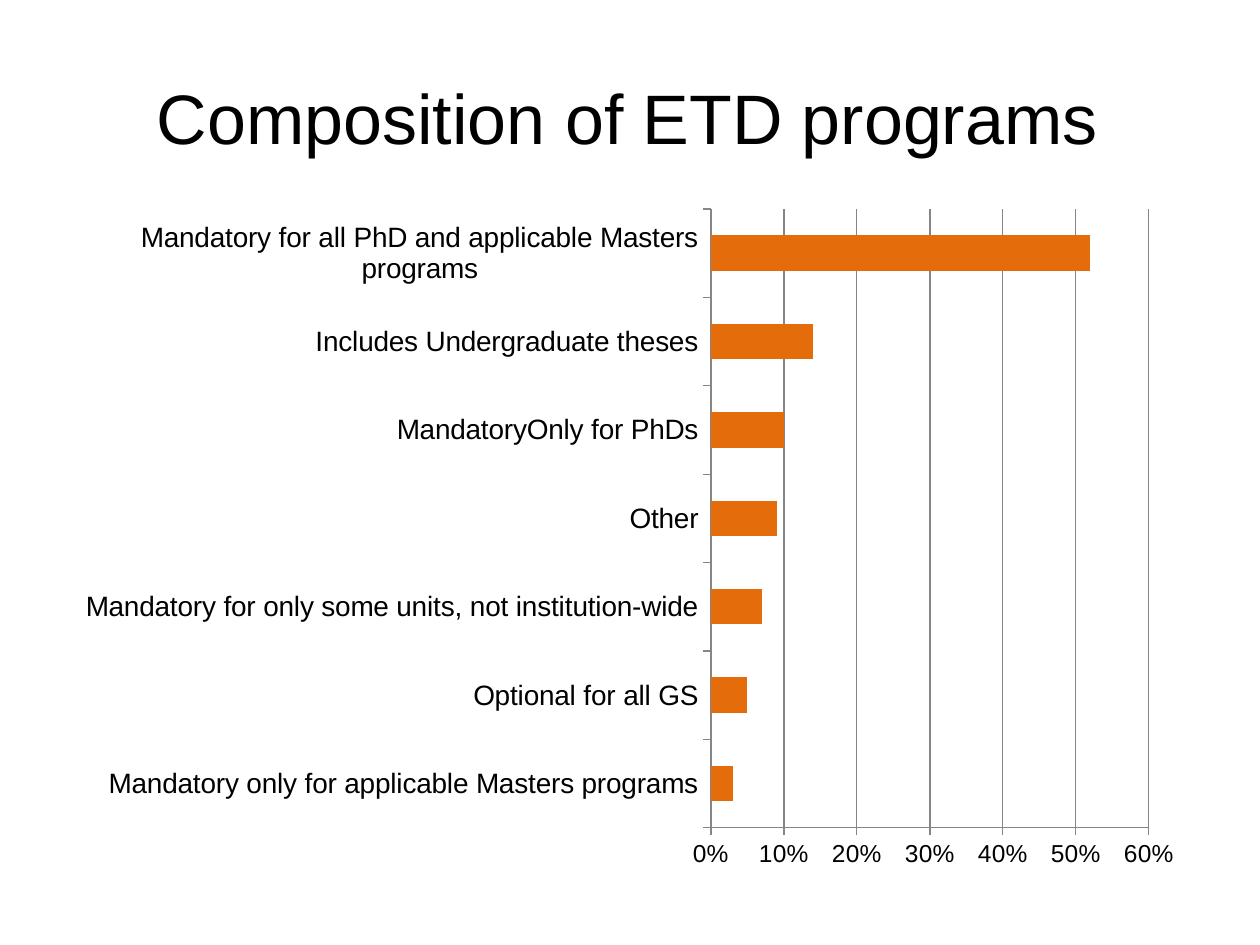
"""Build a slide with a bar chart on the composition of ETD programs."""
from dataclasses import dataclass

import lxml.etree
import pptx
import pptx.chart.axis
import pptx.chart.chart
import pptx.chart.data
import pptx.dml.color
import pptx.enum.chart
import pptx.enum.text
import pptx.oxml.ns
import pptx.slide
import pptx.text.text
import pptx.util

PX_PER_INCH = 126


@dataclass(frozen=True)
class Theme:
    font: str = "Arial"
    text: str = "000000"
    bar: str = "E46C0A"
    line: str = "868686"
    title_size: int = 40
    label_size: int = 16
    scale_size: int = 14


@dataclass(frozen=True)
class Frame:
    left: int
    top: int
    width: int
    height: int

    def emu(self) -> tuple[int, ...]:
        return tuple(map(px, (self.left, self.top, self.width, self.height)))


@dataclass(frozen=True)
class Program:
    name: str
    share: float


THEME = Theme()
TITLE_FRAME = Frame(63, 38, 1167, 158)
TITLE_RIGHT_INSET = 51
CHART_FRAME = Frame(63, 195, 1134, 687)
PLOT_FRAME = Frame(711, 209, 438, 619)
PROGRAMS = [
    Program("Mandatory only for applicable Masters programs", 0.03),
    Program("Optional for all GS", 0.05),
    Program("Mandatory for only some units, not institution-wide", 0.07),
    Program("Other", 0.09),
    Program("MandatoryOnly for PhDs", 0.10),
    Program("Includes Undergraduate theses", 0.14),
    Program("Mandatory for all PhD and applicable Masters programs", 0.52),
]


def px(length: int) -> int:
    return round(length * pptx.util.Inches(1) / PX_PER_INCH)


def rgb(value: str) -> pptx.dml.color.RGBColor:
    return pptx.dml.color.RGBColor.from_string(value)


def style_font(font: pptx.text.text.Font, size: int) -> None:
    font.name = THEME.font
    font.size = pptx.util.Pt(size)
    font.bold = False
    font.color.rgb = rgb(THEME.text)


def add_title(slide: pptx.slide.Slide, text: str) -> None:
    box = slide.shapes.add_textbox(*TITLE_FRAME.emu())
    frame = box.text_frame
    frame.word_wrap = True
    frame.vertical_anchor = pptx.enum.text.MSO_ANCHOR.MIDDLE
    frame.margin_right = px(TITLE_RIGHT_INSET)
    para = frame.paragraphs[0]
    para.alignment = pptx.enum.text.PP_ALIGN.CENTER
    span = para.add_run()
    span.text = text
    style_font(span.font, THEME.title_size)


def place_plot(chart: pptx.chart.chart.Chart, outer: Frame, inner: Frame) -> None:
    qn = pptx.oxml.ns.qn
    area = chart._chartSpace.chart.plotArea
    for old in area.findall(qn("c:layout")):
        area.remove(old)
    layout = lxml.etree.Element(qn("c:layout"))
    manual = lxml.etree.SubElement(layout, qn("c:manualLayout"))
    settings = {
        "layoutTarget": "inner",
        "xMode": "edge",
        "yMode": "edge",
        "x": round((inner.left - outer.left) / outer.width, 4),
        "y": round((inner.top - outer.top) / outer.height, 4),
        "w": round(inner.width / outer.width, 4),
        "h": round(inner.height / outer.height, 4),
    }
    for name, value in settings.items():
        lxml.etree.SubElement(manual, qn(f"c:{name}"), val=str(value))
    area.insert(0, layout)


def style_axis(axis: pptx.chart.axis._BaseAxis, size: int) -> None:
    axis.major_tick_mark = pptx.enum.chart.XL_TICK_MARK.OUTSIDE
    axis.minor_tick_mark = pptx.enum.chart.XL_TICK_MARK.NONE
    axis.format.line.color.rgb = rgb(THEME.line)
    axis.format.line.width = pptx.util.Pt(0.75)
    style_font(axis.tick_labels.font, size)


def add_program_chart(slide: pptx.slide.Slide, programs: list[Program]) -> None:
    data = pptx.chart.data.CategoryChartData(number_format="0%")
    data.categories = [program.name for program in programs]
    data.add_series("Series 1", [program.share for program in programs])
    chart = slide.shapes.add_chart(
        pptx.enum.chart.XL_CHART_TYPE.BAR_CLUSTERED, *CHART_FRAME.emu(), data
    ).chart
    chart.has_title = False
    chart.has_legend = False
    style_font(chart.font, THEME.label_size)
    place_plot(chart, CHART_FRAME, PLOT_FRAME)

    plot = chart.plots[0]
    plot.gap_width = 150
    plot.vary_by_categories = False
    fill = plot.series[0].format.fill
    fill.solid()
    fill.fore_color.rgb = rgb(THEME.bar)

    style_axis(chart.category_axis, THEME.label_size)
    scale = chart.value_axis
    style_axis(scale, THEME.scale_size)
    scale.minimum_scale = 0
    scale.maximum_scale = 0.6
    scale.major_unit = 0.1
    scale.tick_labels.number_format = "0%"
    scale.tick_labels.number_format_is_linked = False
    scale.has_major_gridlines = True
    scale.major_gridlines.format.line.color.rgb = rgb(THEME.line)
    scale.major_gridlines.format.line.width = pptx.util.Pt(0.75)


def main() -> None:
    deck = pptx.Presentation()
    deck.slide_width = px(1260)
    deck.slide_height = px(945)
    page = deck.slides.add_slide(deck.slide_layouts[6])
    add_title(page, "Composition of ETD programs")
    add_program_chart(page, PROGRAMS)
    deck.save("out.pptx")


if __name__ == "__main__":
    main()
